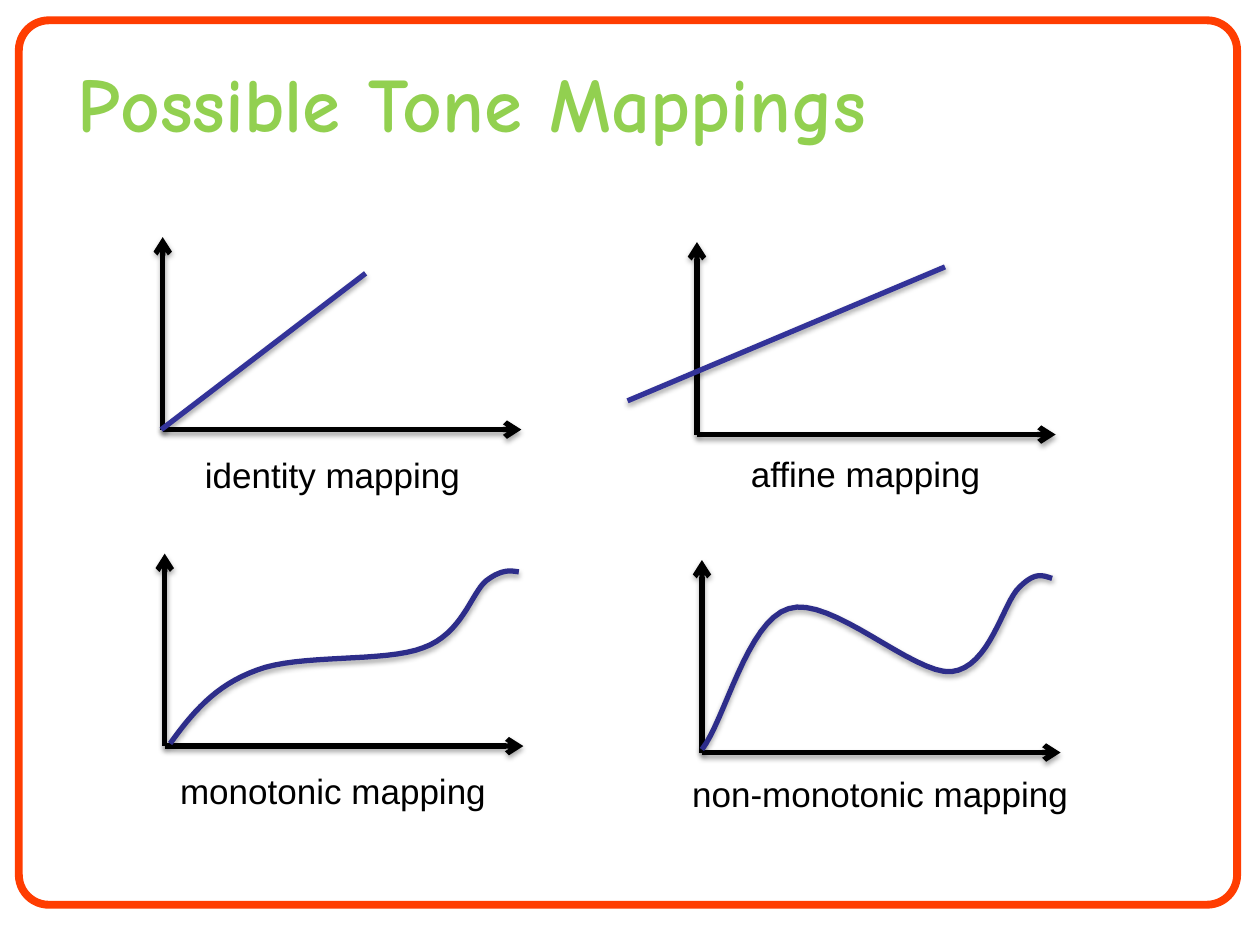
from lxml import etree
from pptx import Presentation
from pptx.dml.color import RGBColor
from pptx.enum.shapes import MSO_CONNECTOR, MSO_SHAPE
from pptx.enum.text import MSO_ANCHOR, PP_ALIGN
from pptx.oxml import parse_xml
from pptx.oxml.ns import nsdecls, qn
from pptx.util import Cm, Pt

STRAIGHT = MSO_CONNECTOR.STRAIGHT
ROUNDED = MSO_SHAPE.ROUNDED_RECTANGLE
MIDDLE, TOP = MSO_ANCHOR.MIDDLE, MSO_ANCHOR.TOP
LEFT, CENTER = PP_ALIGN.LEFT, PP_ALIGN.CENTER

COLORS = {
    "frame": "FF3D01",
    "title": "92D050",
    "axis": "000000",
    "label": "000000",
    "line": "333399",
    "curve": "2D2D8A",
}
TITLE_FONT = {"name": "Comic Neue", "size": Pt(44), "bold": True}
LABEL_FONT = {"name": "Arial", "size": Pt(20), "bold": False}

AXIS_WIDTH, AXIS_HEIGHT = 7.23, 3.88
LABEL_HEIGHT = 1.12
CURVE_STEPS = 16

# Lengths in cm. A path is a start point followed by either one end point
# or by cubic Bezier triples (two controls and an end point).
MAPPINGS = [
    {"name": "identity mapping", "origin": (3.28, 8.66),
     "label": (3.86, 9.02, 5.69),
     "path": [(3.25, 8.66), (7.37, 5.51)]},
    {"name": "affine mapping", "origin": (14.05, 8.76),
     "label": (14.86, 8.99, 5.18),
     "path": [(12.65, 8.08), (19.05, 5.38)]},
    {"name": "monotonic mapping", "origin": (3.32, 15.04),
     "label": (3.35, 15.39, 6.73),
     "path": [(3.43, 14.99),
              (3.86, 14.4), (4.32, 13.82), (5.18, 13.51),
              (6.02, 13.18), (7.77, 13.36), (8.53, 13.06),
              (9.32, 12.78), (9.5, 11.96), (9.8, 11.71),
              (10.13, 11.46), (10.31, 11.51), (10.46, 11.53)]},
    {"name": "non-monotonic mapping", "origin": (14.15, 15.17),
     "label": (13.67, 15.44, 8.15),
     "path": [(14.15, 15.11),
              (14.61, 14.53), (15.06, 12.52), (15.9, 12.27),
              (16.74, 11.99), (18.42, 13.61), (19.18, 13.54),
              (19.96, 13.46), (20.22, 12.14), (20.55, 11.84),
              (20.88, 11.51), (21.03, 11.61), (21.21, 11.66)]},
]


def color(name):
    return RGBColor.from_string(COLORS[name])


def style_stroke(shape, color_name):
    """Give a line or curve its colour, width and soft shadow below."""
    shape.line.color.rgb = color(color_name)
    shape.line.width = Pt(3)
    shape._element.spPr.append(parse_xml(
        f'<a:effectLst {nsdecls("a")}>'
        f'<a:outerShdw blurRad="{Pt(3.1)}" dist="{Pt(1.8)}" dir="5400000" rotWithShape="0">'
        '<a:srgbClr val="000000"><a:alpha val="35000"/></a:srgbClr>'
        '</a:outerShdw></a:effectLst>'))


def add_line(page, start, end, color_name, arrow=False):
    points = [Cm(value) for value in (*start, *end)]
    line = page.shapes.add_connector(STRAIGHT, *points)
    style_stroke(line, color_name)
    if arrow:
        outline = line._element.spPr.find(qn("a:ln"))
        etree.SubElement(outline, qn("a:tailEnd"), type="arrow")


def add_axes(page, origin):
    left, bottom = origin
    add_line(page, origin, (left, bottom - AXIS_HEIGHT), "axis", arrow=True)
    add_line(page, origin, (left + AXIS_WIDTH, bottom), "axis", arrow=True)


def bezier_points(path):
    """Return points along a chain of cubic Bezier segments."""
    points = [path[0]]
    for first in range(0, len(path) - 1, 3):
        segment = path[first:first + 4]
        for step in range(1, CURVE_STEPS + 1):
            t = step / CURVE_STEPS
            weights = ((1 - t) ** 3, 3 * t * (1 - t) ** 2, 3 * t * t * (1 - t), t ** 3)
            points.append(tuple(
                sum(weight * value for weight, value in zip(weights, axis_values))
                for axis_values in zip(*segment)))
    return points


def add_curve(page, path):
    start, *rest = [(Cm(x), Cm(y)) for x, y in bezier_points(path)]
    builder = page.shapes.build_freeform(*start)
    builder.add_line_segments(rest, close=False)
    curve = builder.convert_to_shape()
    curve.fill.background()
    style_stroke(curve, "curve")


def add_text(page, text, place, font, color_name, align, anchor, wrap):
    box = page.shapes.add_textbox(*[Cm(value) for value in place])
    frame = box.text_frame
    frame.word_wrap = wrap
    frame.vertical_anchor = anchor
    para = frame.paragraphs[0]
    para.alignment = align
    span = para.add_run()
    span.text = text
    for key, value in font.items():
        setattr(span.font, key, value)
    span.font.color.rgb = color(color_name)


def add_frame(page):
    border = page.shapes.add_shape(ROUNDED, Cm(0.38), Cm(0.41), Cm(24.56), Cm(17.83))
    border.adjustments[0] = 0.034
    border.shadow.inherit = False
    border.fill.background()
    border.line.color.rgb = color("frame")
    border.line.width = Pt(4.5)


def add_mapping(page, mapping):
    path = mapping["path"]
    add_axes(page, mapping["origin"])
    if len(path) == 2:
        add_line(page, *path, "line")
    else:
        add_curve(page, path)
    add_text(page, mapping["name"], (*mapping["label"], LABEL_HEIGHT),
             LABEL_FONT, "label", CENTER, TOP, wrap=False)


def main():
    deck = Presentation()
    deck.slide_width, deck.slide_height = Cm(25.4), Cm(19.05)
    page = deck.slides.add_slide(deck.slide_layouts[6])
    add_frame(page)
    add_text(page, "Possible Tone Mappings", (1.32, 0.99, 22.71, 2.13),
             TITLE_FONT, "title", LEFT, MIDDLE, wrap=True)
    for mapping in MAPPINGS:
        add_mapping(page, mapping)
    deck.save("out.pptx")


if __name__ == "__main__":
    main()
